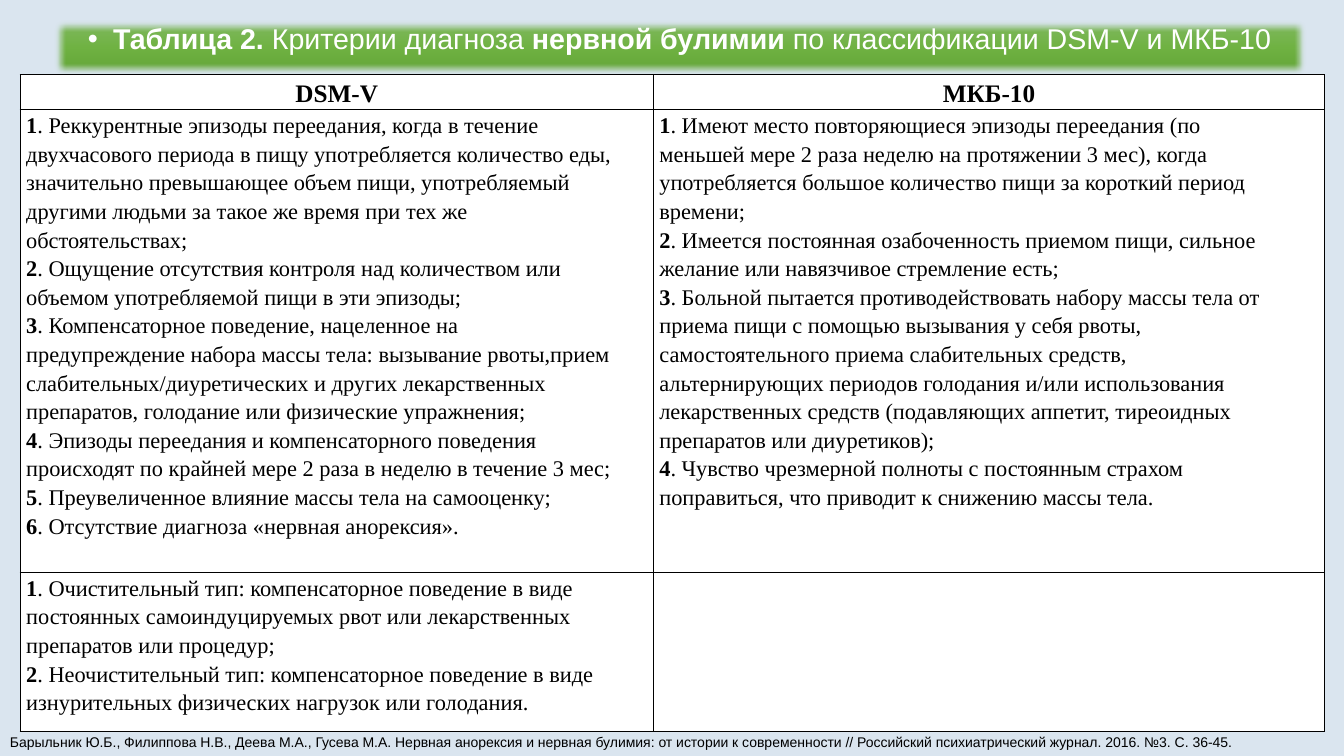
from copy import deepcopy

from lxml.etree import SubElement
from pptx import Presentation
from pptx.dml.color import RGBColor
from pptx.enum.shapes import MSO_SHAPE
from pptx.enum.text import MSO_ANCHOR, PP_ALIGN
from pptx.oxml import parse_xml
from pptx.oxml.ns import nsdecls, qn
from pptx.util import Inches, Pt

BACKGROUND = RGBColor(0xDA, 0xE5, 0xEF)
WHITE = RGBColor(0xFF, 0xFF, 0xFF)
BLACK = RGBColor(0, 0, 0)
GREEN_LINE = RGBColor(0x70, 0xAD, 0x47)
GREENS = [RGBColor(0x81, 0xB8, 0x61), RGBColor(0x6F, 0xB2, 0x42), RGBColor(0x62, 0xA3, 0x36)]

TITLE = [
    ("Таблица 2. ", True),
    ("Критерии диагноза ", False),
    ("нервной булимии", True),
    (" по классификации DSM-V и МКБ-10", False),
]
SOURCE = (
    "Барыльник Ю.Б., Филиппова Н.В., Деева М.А., Гусева М.А. Нервная анорексия и нервная "
    "булимия: от истории к современности // Российский психиатрический журнал. 2016. №3. С. 36-45."
)
HEADERS = ["DSM-V", "МКБ-10"]
DSM_CRITERIA = """1. Реккурентные эпизоды переедания, когда в течение
двухчасового периода в пищу употребляется количество еды,
значительно превышающее объем пищи, употребляемый
другими людьми за такое же время при тех же
обстоятельствах;
2. Ощущение отсутствия контроля над количеством или
объемом употребляемой пищи в эти эпизоды;
3. Компенсаторное поведение, нацеленное на
предупреждение набора массы тела: вызывание рвоты,прием
слабительных/диуретических и других лекарственных
препаратов, голодание или физические упражнения;
4. Эпизоды переедания и компенсаторного поведения
происходят по крайней мере 2 раза в неделю в течение 3 мес;
5. Преувеличенное влияние массы тела на самооценку;
6. Отсутствие диагноза «нервная анорексия»."""
ICD_CRITERIA = """1. Имеют место повторяющиеся эпизоды переедания (по
меньшей мере 2 раза неделю на протяжении 3 мес), когда
употребляется большое количество пищи за короткий период
времени;
2. Имеется постоянная озабоченность приемом пищи, сильное
желание или навязчивое стремление есть;
3. Больной пытается противодействовать набору массы тела от
приема пищи с помощью вызывания у себя рвоты,
самостоятельного приема слабительных средств,
альтернирующих периодов голодания и/или использования
лекарственных средств (подавляющих аппетит, тиреоидных
препаратов или диуретиков);
4. Чувство чрезмерной полноты с постоянным страхом
поправиться, что приводит к снижению массы тела."""
DSM_TYPES = """1. Очистительный тип: компенсаторное поведение в виде
постоянных самоиндуцируемых рвот или лекарственных
препаратов или процедур;
2. Неочистительный тип: компенсаторное поведение в виде
изнурительных физических нагрузок или голодания."""
BODY = [[DSM_CRITERIA, ICD_CRITERIA], [DSM_TYPES, ""]]
COL_WIDTHS = [6.28, 6.66]
ROW_HEIGHTS = [0.35, 4.59, 1.58]


def add_run(p, text, size, font, color, bold=False):
    r = p.add_run()
    r.text = text
    r.font.size = Pt(size)
    r.font.name = font
    r.font.bold = bold
    r.font.color.rgb = color


def fill_gradient(sp, colors):
    """Fill from top to bottom with three evenly spaced colours."""
    sp.fill.gradient()
    sp.fill.gradient_angle = 270
    first = sp.fill._xPr.find(".//" + qn("a:gs"))
    first.addnext(deepcopy(first))
    for i, (stop, color) in enumerate(zip(sp.fill.gradient_stops, colors)):
        stop.position = i / 2
        stop.color.rgb = color


def add_title_bar(s):
    sp = s.shapes.add_shape(
        MSO_SHAPE.RECTANGLE, Inches(0.53), Inches(0.2), Inches(12.42), Inches(0.55))
    fill_gradient(sp, GREENS)
    sp.line.color.rgb = GREEN_LINE
    sp.line.width = Pt(0.5)
    sp.shadow.inherit = False
    effects = sp._element.spPr.find(qn("a:effectLst"))
    SubElement(effects, qn("a:softEdge"), rad=str(Inches(0.07)))

    tf = sp.text_frame
    tf.word_wrap = True
    tf.vertical_anchor = MSO_ANCHOR.TOP
    p = tf.paragraphs[0]
    p.alignment = PP_ALIGN.CENTER
    p.line_spacing = 0.9
    p.space_before = Pt(10)
    pPr = p._p.get_or_add_pPr()
    pPr.set("marL", str(Inches(0.25)))
    pPr.set("indent", str(Inches(-0.25)))
    SubElement(pPr, qn("a:buFont"), typeface="Arial")
    SubElement(pPr, qn("a:buChar"), char="•")
    for text, bold in TITLE:
        add_run(p, text, 20.4, "Arial", WHITE, bold)


def style_cell(cell):
    tcPr = cell._tc.get_or_add_tcPr()
    for side in ("lnL", "lnR", "lnT", "lnB"):
        tcPr.append(parse_xml(
            f'<a:{side} {nsdecls("a")} w="{Pt(1)}"><a:solidFill>'
            f'<a:srgbClr val="{BLACK}"/></a:solidFill></a:{side}>'))
    cell.fill.solid()
    cell.fill.fore_color.rgb = WHITE
    cell.margin_left = cell.margin_right = cell.margin_top = cell.margin_bottom = 0


def write_header(cell, text):
    cell.vertical_anchor = MSO_ANCHOR.MIDDLE
    p = cell.text_frame.paragraphs[0]
    p.alignment = PP_ALIGN.CENTER
    p.line_spacing = 1.15
    add_run(p, text, 18, "Times New Roman", BLACK, True)


def write_criteria(cell, text):
    """Write one paragraph per line, with the leading number in bold."""
    cell.margin_left = Inches(0.06)
    tf = cell.text_frame
    for i, line in enumerate(text.splitlines()):
        p = tf.add_paragraph() if i else tf.paragraphs[0]
        p.line_spacing = 1.15
        if line[0].isdigit():
            add_run(p, line[0], 16, "Times New Roman", BLACK, True)
            line = line[1:]
        add_run(p, line, 16, "Times New Roman", BLACK)


def add_criteria_table(s):
    table = s.shapes.add_table(
        len(ROW_HEIGHTS), len(COL_WIDTHS), Inches(0.2), Inches(0.74),
        Inches(sum(COL_WIDTHS)), Inches(sum(ROW_HEIGHTS))).table
    for column, width in zip(table.columns, COL_WIDTHS):
        column.width = Inches(width)
    for row, height in zip(table.rows, ROW_HEIGHTS):
        row.height = Inches(height)
    for cell in table.iter_cells():
        style_cell(cell)
    for col, header in enumerate(HEADERS):
        write_header(table.cell(0, col), header)
    for row, texts in enumerate(BODY, start=1):
        for col, text in enumerate(texts):
            write_criteria(table.cell(row, col), text)


def add_source_note(s):
    box = s.shapes.add_textbox(0, Inches(7.23), Inches(12.61), Inches(0.27))
    tf = box.text_frame
    tf.word_wrap = True
    add_run(tf.paragraphs[0], SOURCE, 10, "Arial", BLACK)


def main():
    prs = Presentation()
    prs.slide_width = Inches(13.33)
    prs.slide_height = Inches(7.5)
    s = prs.slides.add_slide(prs.slide_layouts[6])
    s.background.fill.solid()
    s.background.fill.fore_color.rgb = BACKGROUND
    add_title_bar(s)
    add_criteria_table(s)
    add_source_note(s)
    prs.save("out.pptx")


if __name__ == "__main__":
    main()
